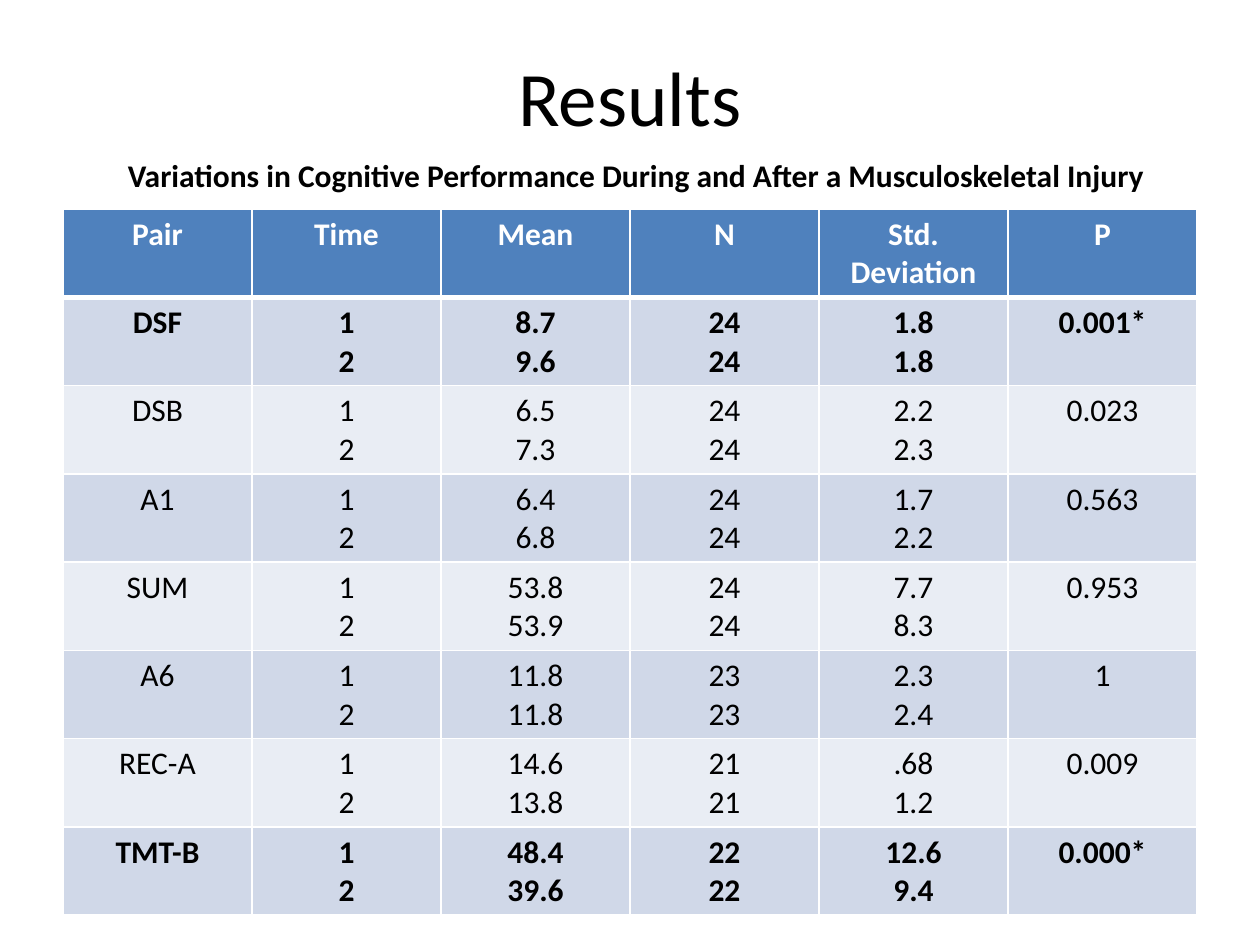
import dataclasses

import lxml.etree
import pptx
import pptx.dml.color
import pptx.enum.text
import pptx.oxml.ns
import pptx.util


@dataclasses.dataclass(frozen=True)
class Theme:
    font: str = "Calibri"
    title_size: int = 44
    body_size: int = 18
    ink: str = "000000"
    paper: str = "FFFFFF"
    header: str = "4F81BD"
    bands: tuple = ("D0D8E8", "E9EDF4")
    border: int = 1
    header_rule: int = 3


THEME = Theme()
UNIT = 0.05  # inches to a grid column or row: the slide is 200 by 150
HEADINGS = ("Pair", "Time", "Mean", "N", "Std. Deviation", "P")
# Pair, means, sample size, standard deviations, P
RESULTS = (
    ("DSF", ("8.7", "9.6"), "24", ("1.8", "1.8"), "0.001*"),
    ("DSB", ("6.5", "7.3"), "24", ("2.2", "2.3"), "0.023"),
    ("A1", ("6.4", "6.8"), "24", ("1.7", "2.2"), "0.563"),
    ("SUM", ("53.8", "53.9"), "24", ("7.7", "8.3"), "0.953"),
    ("A6", ("11.8", "11.8"), "23", ("2.3", "2.4"), "1"),
    ("REC-A", ("14.6", "13.8"), "21", (".68", "1.2"), "0.009"),
    ("TMT-B", ("48.4", "39.6"), "22", ("12.6", "9.4"), "0.000*"),
)


def grid(count):
    return pptx.util.Inches(count * UNIT)


def set_all(target, values):
    for name, value in values.items():
        setattr(target, name, value)


def write_lines(frame, lines, size, color, bold=False):
    """Write each line as a centred paragraph."""
    for index, line in enumerate(lines):
        para = frame.add_paragraph() if index else frame.paragraphs[0]
        para.alignment = pptx.enum.text.PP_ALIGN.CENTER
        span = para.add_run()
        span.text = line
        set_all(span.font, {"name": THEME.font, "size": pptx.util.Pt(size), "bold": bold})
        span.font.color.rgb = pptx.dml.color.RGBColor.from_string(color)


def add_heading(page, box, text, size, bold=False, top_margin=1):
    frame = page.shapes.add_textbox(*map(grid, box)).text_frame
    set_all(frame, {"word_wrap": True, "margin_top": grid(top_margin), "margin_bottom": 0,
                    "vertical_anchor": pptx.enum.text.MSO_ANCHOR.TOP})
    write_lines(frame, [text], size, THEME.ink, bold)


def style_cell(cell, fill, bottom):
    """Give the cell white borders, with the given bottom width, and a fill."""
    properties = cell._tc.get_or_add_tcPr()
    widths = {"lnL": THEME.border, "lnR": THEME.border, "lnT": THEME.border, "lnB": bottom}
    for edge, width in widths.items():
        line = lxml.etree.SubElement(properties, pptx.oxml.ns.qn(f"a:{edge}"),
                                     w=str(pptx.util.Pt(width)))
        solid = lxml.etree.SubElement(line, pptx.oxml.ns.qn("a:solidFill"))
        lxml.etree.SubElement(solid, pptx.oxml.ns.qn("a:srgbClr"), val=THEME.paper)
    cell.fill.solid()
    cell.fill.fore_color.rgb = pptx.dml.color.RGBColor.from_string(fill)


def add_results_table(page, box):
    row_count, column_count = len(RESULTS) + 1, len(HEADINGS)
    table = page.shapes.add_table(row_count, column_count, *map(grid, box)).table
    table.horz_banding = False
    for column in table.columns:
        column.width = grid(box[2] / column_count)
    for row in table.rows:
        row.height = grid(box[3] / row_count)

    for column, heading in enumerate(HEADINGS):
        cell = table.cell(0, column)
        style_cell(cell, THEME.header, THEME.header_rule)
        write_lines(cell.text_frame, [heading], THEME.body_size, THEME.paper, bold=True)

    for row, (pair, means, number, deviations, p_value) in enumerate(RESULTS, 1):
        significant = p_value.endswith("*")
        entries = ([pair], ("1", "2"), means, (number, number), deviations, [p_value])
        for column, lines in enumerate(entries):
            cell = table.cell(row, column)
            style_cell(cell, THEME.bands[(row - 1) % 2], THEME.border)
            write_lines(cell.text_frame, lines, THEME.body_size, THEME.ink, significant)
            if row == 1:
                top = cell._tc.tcPr.find(pptx.oxml.ns.qn("a:lnT"))
                top.set("w", str(pptx.util.Pt(THEME.header_rule)))


def main():
    deck = pptx.Presentation()
    set_all(deck, {"slide_width": grid(200), "slide_height": grid(150)})
    page = deck.slides.add_slide(deck.slide_layouts[6])
    add_heading(page, (10, 6, 180, 15), "Results", THEME.title_size, top_margin=1.8)
    add_results_table(page, (10, 33.2, 180, 104))
    add_heading(page, (10, 23.8, 182, 8),
                "Variations in Cognitive Performance During and After a Musculoskeletal Injury",
                THEME.body_size, bold=True)
    deck.save("out.pptx")


if __name__ == "__main__":
    main()
